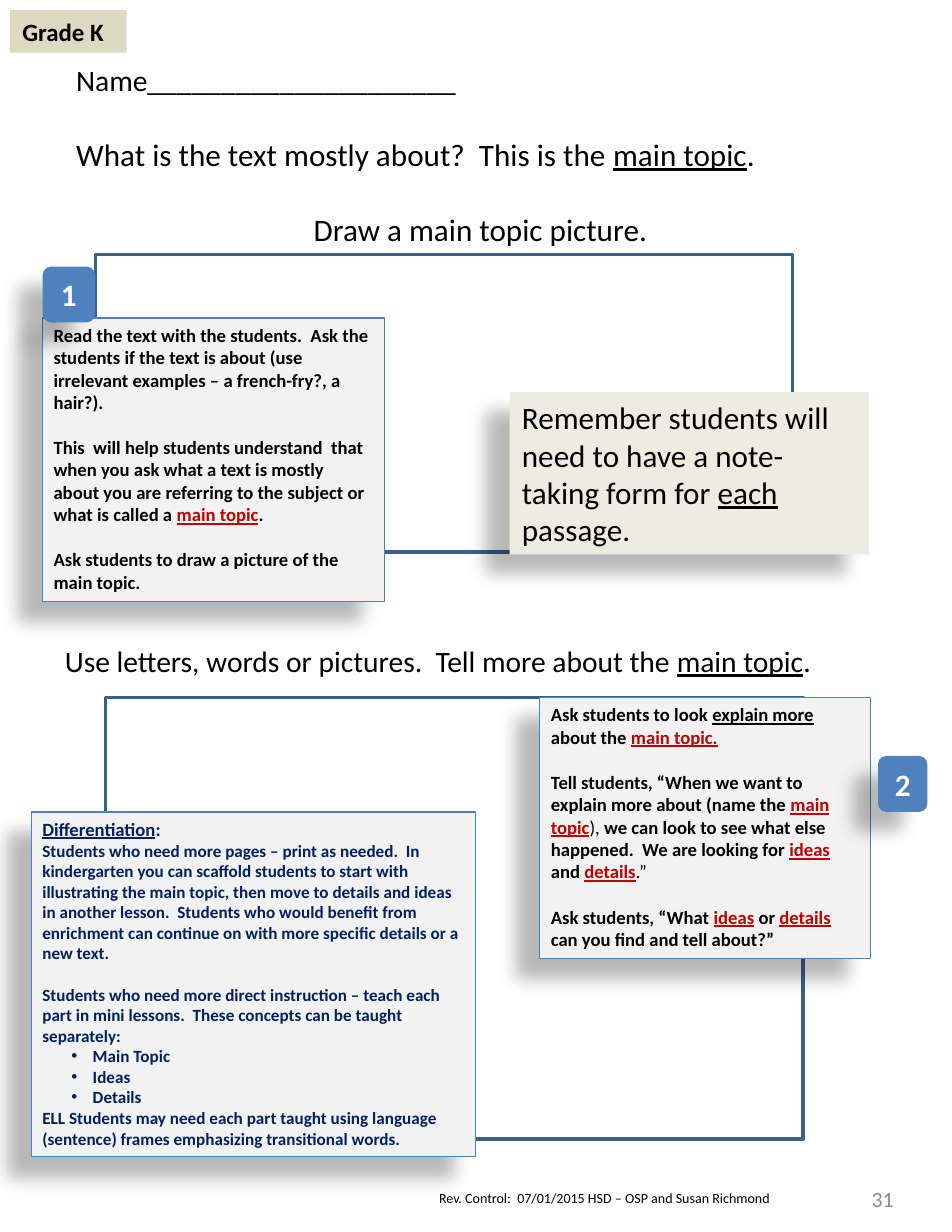
from lxml.etree import SubElement
from pptx import Presentation
from pptx.dml.color import RGBColor
from pptx.enum.shapes import MSO_SHAPE as Preset
from pptx.enum.text import MSO_ANCHOR as Anchor, PP_ALIGN as Align
from pptx.oxml.ns import qn
from pptx.util import Inches, Pt

BLACK = RGBColor(0x00, 0x00, 0x00)
WHITE = RGBColor(0xFF, 0xFF, 0xFF)
GRAY = RGBColor(0x8C, 0x8C, 0x8C)
RED = RGBColor(0xC0, 0x00, 0x00)
NAVY = RGBColor(0x00, 0x20, 0x60)
BLUE = RGBColor(0x4F, 0x81, 0xBD)
FRAME_BLUE = RGBColor(0x3A, 0x5F, 0x8C)
NOTE_FILL = RGBColor(0xF2, 0xF2, 0xF2)
TAN = RGBColor(0xDD, 0xD9, 0xC3)
CREAM = RGBColor(0xEE, 0xEC, 0xE1)

UNDERLINED = {"underline": True}
KEYWORD = {"underline": True, "color": RED}
LIGHT = {"bold": False}
LINE_FACTOR = 1.22


def format_run(run, size, color=BLACK, bold=False, underline=False):
    """Set the font of one run."""
    font = run.font
    font.name, font.size, font.bold, font.underline = "Calibri", Pt(size), bold, underline
    font.color.rgb = color


def add_bullet(paragraph):
    """Give a paragraph a hanging bullet."""
    properties = paragraph._p.get_or_add_pPr()
    properties.set("marL", str(Inches(0.45)))
    properties.set("indent", str(Inches(-0.19)))
    SubElement(properties, qn("a:buFont"), typeface="Arial")
    SubElement(properties, qn("a:buChar"), char="•")


def write_paragraph(shape, parts, size, gap=0, align=Align.LEFT, bullet=False, **style):
    """Add a paragraph of plain or (text, style) parts, with a gap above in lines."""
    frame = shape.text_frame
    paragraph = frame.paragraphs[0]
    if paragraph.runs:
        paragraph = frame.add_paragraph()
    paragraph.alignment = align
    paragraph.space_before = Pt(round(gap * size * LINE_FACTOR, 1))
    if bullet:
        add_bullet(paragraph)
    for part in [parts] if isinstance(parts, str) else parts:
        text, special = (part, {}) if isinstance(part, str) else part
        run = paragraph.add_run()
        run.text = text
        format_run(run, size, **{**style, **special})


def prepare_frame(shape, margins, anchor=Anchor.TOP):
    """Set wrapping, margins and anchor of the text in a shape."""
    frame = shape.text_frame
    frame.word_wrap = True
    frame.vertical_anchor = anchor
    frame.margin_left = frame.margin_right = Inches(margins[0])
    frame.margin_top = frame.margin_bottom = Inches(margins[1])


def add_text_box(slide, left, top, width, height, anchor=Anchor.TOP):
    """Add an empty text box."""
    box = slide.shapes.add_textbox(Inches(left), Inches(top), Inches(width), Inches(height))
    prepare_frame(box, (0.11, 0.06), anchor)
    return box


def add_shadow(shape):
    """Add the soft shadow that falls to the lower left."""
    effects = shape._element.spPr.find(qn("a:effectLst"))
    shadow = SubElement(effects, qn("a:outerShdw"), blurRad=str(Pt(11.8)), dist=str(Pt(19.7)),
                        dir=str(141 * 60000), algn="tl", rotWithShape="0")
    color = SubElement(shadow, qn("a:srgbClr"), val=str(BLACK))
    SubElement(color, qn("a:alpha"), val="28000")


def add_panel(slide, left, top, width, height, preset=Preset.RECTANGLE, fill=None, line=None,
              line_width=0.75, shadow=False, margins=(0.1, 0.05), anchor=Anchor.TOP):
    """Add a preset shape with its fill, line and shadow."""
    panel = slide.shapes.add_shape(preset, Inches(left), Inches(top), Inches(width), Inches(height))
    if fill is None:
        panel.fill.background()
    else:
        panel.fill.solid()
        panel.fill.fore_color.rgb = fill
    if line is None:
        panel.line.fill.background()
    else:
        panel.line.color.rgb = line
        panel.line.width = Pt(line_width)
    panel.shadow.inherit = False
    if shadow:
        add_shadow(panel)
    prepare_frame(panel, margins, anchor)
    return panel


def add_note(slide, left, top, width, height):
    """Add a shadowed teacher note."""
    return add_panel(slide, left, top, width, height, fill=NOTE_FILL, line=BLUE, shadow=True)


def add_badge(slide, number, left, top, width):
    """Add a rounded step number."""
    badge = add_panel(slide, left, top, width, 0.5, Preset.ROUNDED_RECTANGLE, fill=BLUE,
                      shadow=True, anchor=Anchor.MIDDLE)
    write_paragraph(badge, number, 20, align=Align.CENTER, color=WHITE, bold=True)


def add_drawing_frame(slide, left, top, height):
    """Add an empty frame for student work."""
    add_panel(slide, left, top, 6.23, height, line=FRAME_BLUE, line_width=2)


def add_worksheet(slide):
    """Add the student prompts and drawing frames."""
    prompts = add_text_box(slide, 0.57, 0.49, 7.44, 1.77)
    write_paragraph(prompts, "Name" + "_" * 21, 19)
    write_paragraph(prompts, ["What is the text mostly about?  This is the ",
                              ("main topic", UNDERLINED), "."], 20, gap=1)
    write_paragraph(prompts, "Draw a main topic picture.", 20, gap=1, align=Align.CENTER)
    add_drawing_frame(slide, 0.85, 2.27, 2.66)

    grade = add_panel(slide, 0.09, 0.09, 1.04, 0.38, fill=TAN, margins=(0.11, 0.06))
    write_paragraph(grade, "Grade K", 16, bold=True)

    details = add_text_box(slide, 0.47, 5.68, 7.44, 0.43)
    write_paragraph(details, ["Use letters, words or pictures.  Tell more about the ",
                              ("main topic", UNDERLINED), "."], 19)
    add_drawing_frame(slide, 0.94, 6.23, 3.94)


def add_teacher_notes(slide):
    """Add the numbered notes, the reminder and the differentiation note."""
    topic = add_note(slide, 0.38, 2.84, 3.05, 2.53)
    write_paragraph(topic, "Read the text with the students.  Ask the students if the text is about "
                    "(use irrelevant examples – a french-fry?, a hair?).", 12, bold=True)
    write_paragraph(topic, ["This  will help students understand  that when you ask what a text is "
                            "mostly about you are referring to the subject or what is called a ",
                            ("main topic", KEYWORD), "."], 12, gap=1, bold=True)
    write_paragraph(topic, "Ask students to draw a picture of the main topic.", 12, gap=1, bold=True)
    add_badge(slide, "1", 0.38, 2.38, 0.47)

    explain = add_note(slide, 4.82, 6.23, 2.95, 2.33)
    write_paragraph(explain, ["Ask students to look ", ("explain more", UNDERLINED), " about the ",
                              ("main topic.", KEYWORD)], 12, bold=True)
    write_paragraph(explain, ["Tell students, “When we want to explain more about (name the ",
                              ("main topic", KEYWORD), ("), ", LIGHT),
                              "we can look to see what else happened.  We are looking for ",
                              ("ideas", KEYWORD), " and ", ("details", KEYWORD), (".”", LIGHT)],
                    12, gap=1, bold=True)
    write_paragraph(explain, ["Ask students, “What ", ("ideas", KEYWORD), " or ",
                              ("details", KEYWORD), " can you find and tell about?”"],
                    12, gap=1, bold=True)
    add_badge(slide, "2", 7.84, 6.75, 0.44)

    reminder = add_panel(slide, 4.55, 3.5, 3.21, 1.45, fill=CREAM, shadow=True, margins=(0.11, 0.06))
    write_paragraph(reminder, ["Remember students will need to have a note-taking form for ",
                               ("each", UNDERLINED), " passage."], 20)

    support = add_note(slide, 0.28, 7.25, 3.97, 3.08)
    style = {"color": NAVY, "bold": True}
    write_paragraph(support, [("Differentiation", UNDERLINED), ":"], 12, **style)
    write_paragraph(support, "Students who need more pages – print as needed.  In kindergarten you can "
                    "scaffold students to start with illustrating the main topic, then move to details "
                    "and ideas in another lesson.  Students who would benefit from enrichment can "
                    "continue on with more specific details or a new text.", 11, **style)
    write_paragraph(support, "Students who need more direct instruction – teach each part in mini "
                    "lessons.  These concepts can be taught separately:", 11, gap=1, **style)
    for concept in ("Main Topic", "Ideas", "Details"):
        write_paragraph(support, concept, 11, bullet=True, **style)
    write_paragraph(support, "ELL Students may need each part taught using language (sentence) frames "
                    "emphasizing transitional words.", 11, **style)


def add_footer(slide):
    """Add the revision line and the page number."""
    revision = add_text_box(slide, 3.81, 10.56, 4.25, 0.26)
    write_paragraph(revision, "Rev. Control:  07/01/2015 HSD – OSP and Susan Richmond", 9)
    page = add_text_box(slide, 7.17, 10.41, 0.92, 0.59, Anchor.MIDDLE)
    write_paragraph(page, "31", 14, align=Align.RIGHT, color=GRAY)


def main():
    """Build and save the worksheet slide."""
    presentation = Presentation()
    presentation.slide_width, presentation.slide_height = Inches(8.5), Inches(11)
    slide = presentation.slides.add_slide(presentation.slide_layouts[6])
    add_footer(slide)
    add_worksheet(slide)
    add_teacher_notes(slide)
    presentation.save("out.pptx")


if __name__ == "__main__":
    main()
